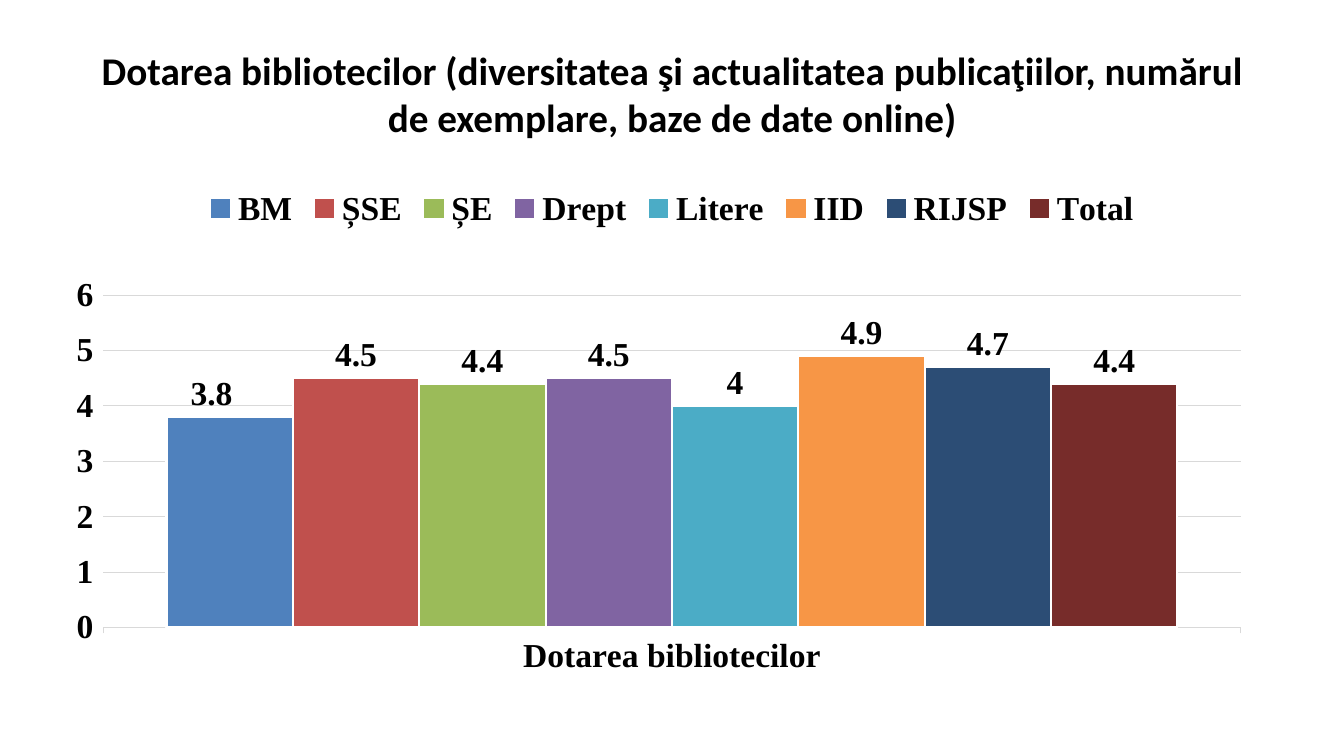
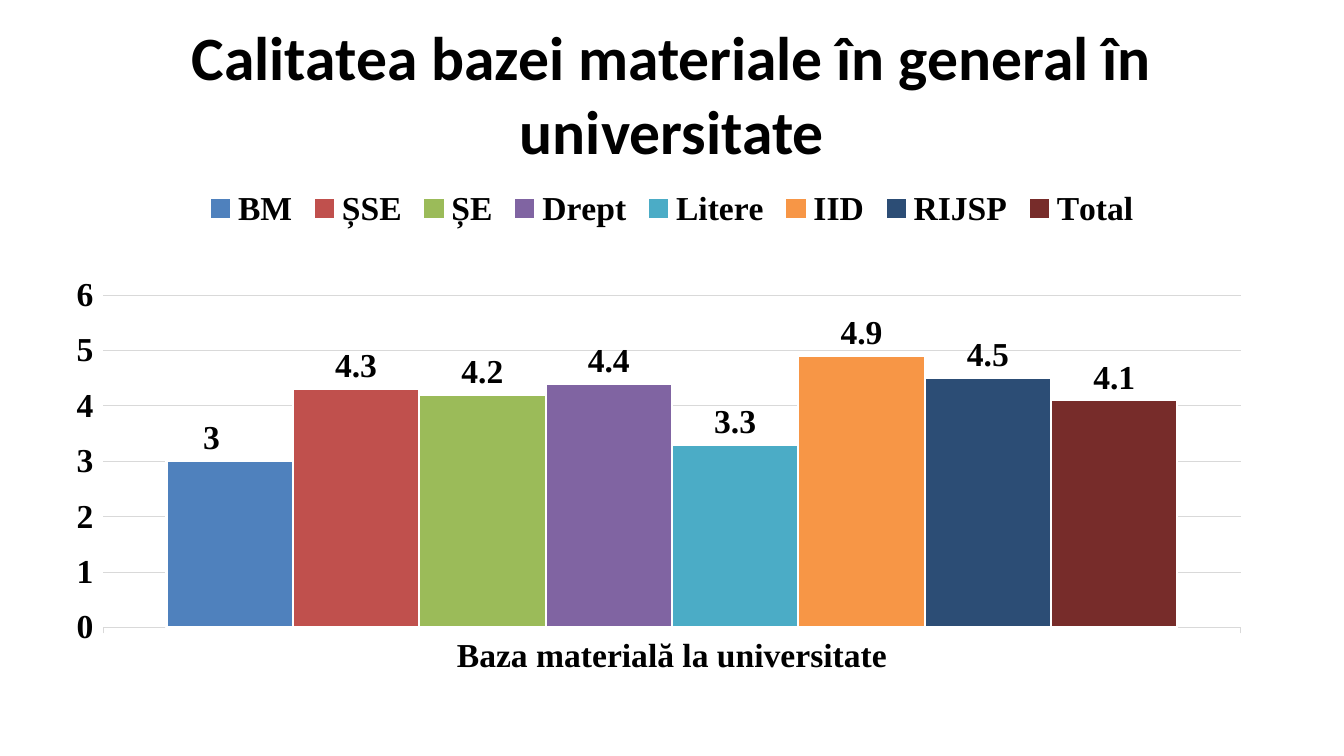
from dataclasses import dataclass

from pptx import Presentation
from pptx.chart.data import CategoryChartData
from pptx.dml.color import RGBColor
from pptx.enum.chart import XL_CHART_TYPE, XL_LABEL_POSITION, XL_LEGEND_POSITION, XL_TICK_MARK
from pptx.enum.text import MSO_ANCHOR, MSO_AUTO_SIZE, PP_ALIGN
from pptx.oxml import parse_xml
from pptx.oxml.ns import nsdecls
from pptx.util import Emu, Pt


@dataclass(frozen=True)
class Theme:
    """Colours, fonts and type sizes shared by the slides."""
    text: str = "000000"
    grid: str = "D9D9D9"
    edge: str = "FFFFFF"
    title_font: str = "Calibri"
    chart_font: str = "Times New Roman"
    title_size: int = 44
    long_title_size: int = 28
    chart_size: int = 24
    grid_width: float = 0.75
    edge_width: float = 1.5


THEME = Theme()
FACULTIES = {
    "BM": "4F81BD", "ȘSE": "C0504D", "ȘE": "9BBB59", "Drept": "8064A2",
    "Litere": "4BACC6", "IID": "F79646", "RIJSP": "2C4D75", "Total": "772C2A",
}
SLIDE_SIZE = (1344, 756)
TITLE_BOX = (67, 30, 1210, 126)
CHART_BOX = (67, 176, 1210, 499)
PLOT_AREA = {"x": 0.03, "y": 0.24, "w": 0.94, "h": 0.67}
FIRST_LABEL_SHIFT = {"x": -0.015, "y": 0}

SLIDES = [
    ("Dotarea bibliotecilor (diversitatea şi actualitatea publicaţiilor, "
     "numărul de exemplare, baze de date online)", THEME.long_title_size,
     "Dotarea bibliotecilor", (3.8, 4.5, 4.4, 4.5, 4, 4.9, 4.7, 4.4)),
    ("Calitatea bazei materiale în general în universitate", THEME.title_size,
     "Baza materială la universitate", (3, 4.3, 4.2, 4.4, 3.3, 4.9, 4.5, 4.1)),
]


def px(n):
    """Turn px into EMU."""
    return Emu(round(n * 9144000 / 1008))


def style_font(font, name=THEME.chart_font, size=THEME.chart_size, color=THEME.text, bold=True):
    """Format a font of a run or a chart part."""
    font.name, font.size, font.bold = name, Pt(size), bold
    font.color.rgb = RGBColor.from_string(color)


def write(tf, text, align=PP_ALIGN.CENTER, anchor=MSO_ANCHOR.MIDDLE, **font):
    """Write one formatted paragraph into a text frame."""
    tf.word_wrap, tf.auto_size, tf.vertical_anchor = True, MSO_AUTO_SIZE.NONE, anchor
    p = tf.paragraphs[0]
    p.alignment = align
    r = p.add_run()
    r.text = text
    style_font(r.font, **font)


def style_line(line, color, width):
    """Give a line its colour and width."""
    line.color.rgb = RGBColor.from_string(color)
    line.width = Pt(width)


def manual_layout(modes="", **fractions):
    """Build a chart layout element from fractions of the chart."""
    values = "".join(f'<c:{k} val="{v}"/>' for k, v in fractions.items())
    return parse_xml(f'<c:layout {nsdecls("c")}><c:manualLayout>{modes}{values}'
                     '</c:manualLayout></c:layout>')


def place_title(s, box, text, size):
    """Place the slide title in its box."""
    title = s.shapes.title
    title.left, title.top, title.width, title.height = map(px, box)
    write(title.text_frame, text, name=THEME.title_font, size=size)


def style_axes(chart):
    """Format both axes and the gridlines."""
    cat, val = chart.category_axis, chart.value_axis
    for axis in (cat, val):
        axis.major_tick_mark = XL_TICK_MARK.OUTSIDE
        axis.minor_tick_mark = XL_TICK_MARK.NONE
        style_font(axis.tick_labels.font)
    style_line(cat.format.line, THEME.grid, THEME.grid_width)
    val.format.line.fill.background()
    val.minimum_scale, val.maximum_scale, val.major_unit = 0, 6, 1
    style_line(val.major_gridlines.format.line, THEME.grid, THEME.grid_width)


def style_series(series, color):
    """Format the columns and value labels of one series."""
    series.format.fill.solid()
    series.format.fill.fore_color.rgb = RGBColor.from_string(color)
    style_line(series.format.line, THEME.edge, THEME.edge_width)
    labels = series.data_labels
    labels.show_value = True
    labels.position = XL_LABEL_POSITION.OUTSIDE_END
    style_font(labels.font)


def place_layouts(chart):
    """Fix the plot area and shift the first value label."""
    area = chart.element.xpath("c:chart/c:plotArea")[0]
    for old in area.xpath("c:layout"):
        area.remove(old)
    modes = '<c:layoutTarget val="inner"/><c:xMode val="edge"/><c:yMode val="edge"/>'
    area.insert(0, manual_layout(modes, **PLOT_AREA))
    label = chart.plots[0].series[0].points[0].data_label
    label.position = XL_LABEL_POSITION.OUTSIDE_END
    style_font(label.font)
    idx = chart.element.xpath(".//c:dLbl/c:idx")[0]
    idx.addnext(manual_layout(**FIRST_LABEL_SHIFT))


def place_chart(s, box, category, values):
    """Place the column chart of all faculties in its box."""
    data = CategoryChartData()
    data.categories = [category]
    for name, value in zip(FACULTIES, values):
        data.add_series(name, [value])
    chart = s.shapes.add_chart(XL_CHART_TYPE.COLUMN_CLUSTERED, *map(px, box), data).chart
    chart.has_title = False
    style_font(chart.font)
    chart.has_legend = True
    chart.legend.position = XL_LEGEND_POSITION.TOP
    chart.legend.include_in_layout = False
    style_font(chart.legend.font)
    style_axes(chart)
    plot = chart.plots[0]
    plot.gap_width, plot.overlap, plot.vary_by_categories = 100, 0, False
    for series, color in zip(plot.series, FACULTIES.values()):
        style_series(series, color)
    place_layouts(chart)


def add_chart_slide(prs, title, size, category, values):
    """Add a slide with a title above a chart."""
    s = prs.slides.add_slide(prs.slide_layouts[5])
    place_title(s, TITLE_BOX, title, size)
    place_chart(s, CHART_BOX, category, values)


def main():
    """Build and save the presentation."""
    prs = Presentation()
    prs.slide_width, prs.slide_height = map(px, SLIDE_SIZE)
    for content in SLIDES:
        add_chart_slide(prs, *content)
    prs.save("out.pptx")


if __name__ == "__main__":
    main()
